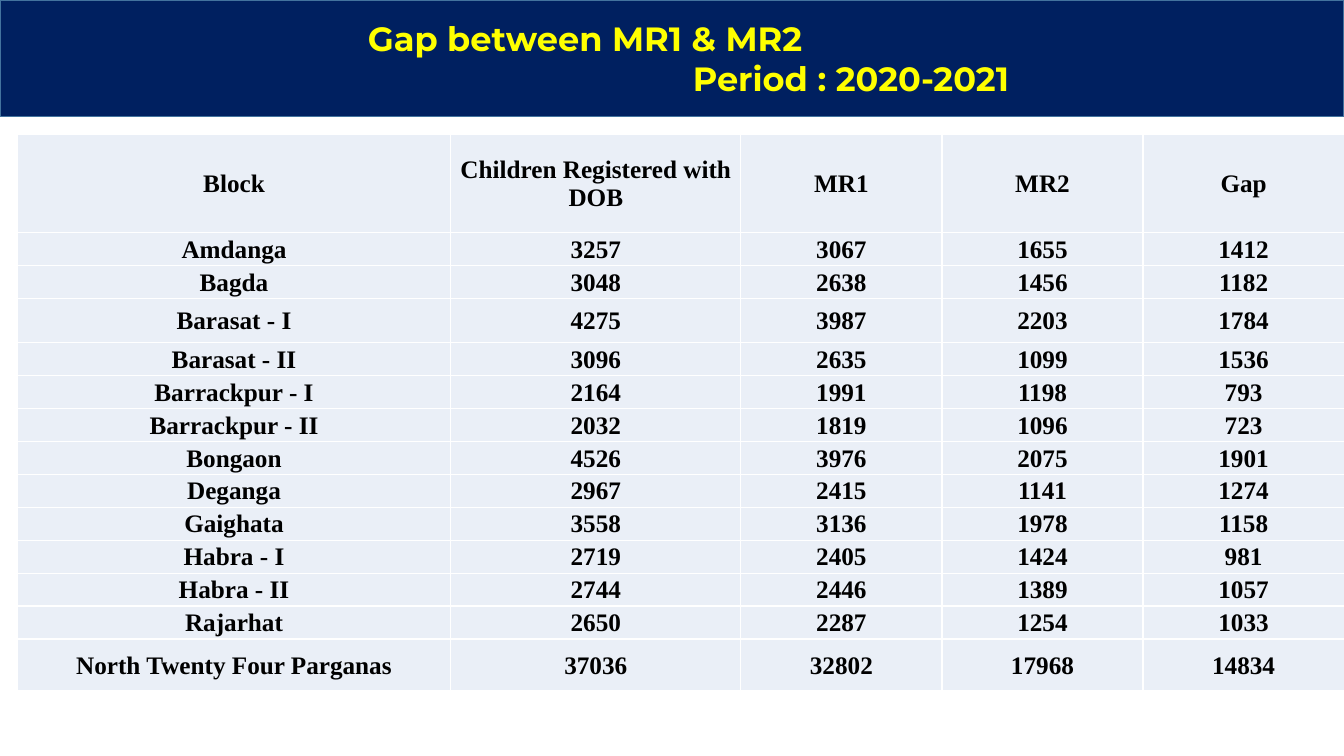
import pptx
import pptx.util
import pptx.dml.color
import pptx.enum.text
import pptx.oxml

HEADINGS = ("Block", "Children Registered with DOB", "MR1", "MR2", "Gap")
BLOCKS = [
    ("Amdanga", 3257, 3067, 1655, 1412),
    ("Bagda", 3048, 2638, 1456, 1182),
    ("Barasat - I", 4275, 3987, 2203, 1784),
    ("Barasat - II", 3096, 2635, 1099, 1536),
    ("Barrackpur - I", 2164, 1991, 1198, 793),
    ("Barrackpur - II", 2032, 1819, 1096, 723),
    ("Bongaon", 4526, 3976, 2075, 1901),
    ("Deganga", 2967, 2415, 1141, 1274),
    ("Gaighata", 3558, 3136, 1978, 1158),
    ("Habra - I", 2719, 2405, 1424, 981),
    ("Habra - II", 2744, 2446, 1389, 1057),
    ("Rajarhat", 2650, 2287, 1254, 1033),
]
DISTRICT = ("North Twenty Four Parganas", 37036, 32802, 17968, 14834)

COLUMN_SPANS = [25.8, 17.27] + [11.97] * 3
BLOCK_SPAN = 2.96
SPECIAL_SPANS = {"Block": 8.86, "Barasat - I": 4, "North Twenty Four Parganas": 4.68}


def colour(value):
    return pptx.dml.color.RGBColor.from_string(value)


def apply(target, formats):
    for attribute, value in formats.items():
        setattr(target, attribute, value)


class GapSlide:
    GRID_COLUMNS = 80
    GRID_ROWS = 68
    NAVY, EDGE, YELLOW = "002060", "43739E", "FFFF00"
    PALE, WHITE, BLACK = "EAEFF7", "FFFFFF", "000000"
    CENTER = pptx.enum.text.PP_ALIGN.CENTER
    LEFT = pptx.enum.text.PP_ALIGN.LEFT
    MIDDLE = pptx.enum.text.MSO_ANCHOR.MIDDLE
    TITLE_FONT = {"name": "Montserrat", "size": pptx.util.Pt(24), "bold": True}
    TABLE_FONT = {"name": "Times New Roman", "size": pptx.util.Pt(18), "bold": True}
    CELL = {
        "margin_left": pptx.util.Inches(0.01),
        "margin_right": pptx.util.Inches(0.01),
        "margin_top": pptx.util.Inches(0.01),
        "margin_bottom": 0,
        "vertical_anchor": MIDDLE,
    }

    def __init__(self, presentation):
        self.column = presentation.slide_width / self.GRID_COLUMNS
        self.row = presentation.slide_height / self.GRID_ROWS
        self.slide = presentation.slides.add_slide(presentation.slide_layouts[5])

    def across(self, columns):
        return round(columns * self.column)

    def down(self, rows):
        return round(rows * self.row)

    def text(self, paragraph, words, font, hue, alignment):
        paragraph.text = words
        paragraph.alignment = alignment
        apply(paragraph.font, font)
        paragraph.font.color.rgb = colour(hue)

    def title(self, subject, period, subject_indent, rows):
        banner = self.slide.shapes.title
        apply(banner, {"left": 0, "top": 0,
                       "width": self.across(self.GRID_COLUMNS),
                       "height": self.down(rows)})
        banner.fill.solid()
        banner.fill.fore_color.rgb = colour(self.NAVY)
        banner.line.color.rgb = colour(self.EDGE)
        banner.line.width = pptx.util.Pt(1)
        frame = banner.text_frame
        apply(frame, {"vertical_anchor": self.MIDDLE, "word_wrap": True,
                      "auto_size": pptx.enum.text.MSO_AUTO_SIZE.NONE})
        heading = frame.paragraphs[0]
        heading._p.get_or_add_pPr().set("marL", str(self.across(subject_indent)))
        self.text(heading, subject, self.TITLE_FONT, self.YELLOW, self.LEFT)
        self.text(frame.add_paragraph(), period, self.TITLE_FONT, self.YELLOW, self.CENTER)

    def border(self, cell):
        properties = cell._tc.get_or_add_tcPr()
        for position, side in enumerate(("lnL", "lnR", "lnT", "lnB")):
            properties.insert(position, pptx.oxml.parse_xml(
                f'<a:{side} xmlns:a="http://schemas.openxmlformats.org/drawingml/2006/main" '
                f'w="{pptx.util.Pt(1)}"><a:solidFill><a:srgbClr val="{self.WHITE}"/>'
                f'</a:solidFill></a:{side}>'))

    def cell(self, cell, words):
        apply(cell, self.CELL)
        cell.fill.solid()
        cell.fill.fore_color.rgb = colour(self.PALE)
        self.border(cell)
        self.text(cell.text_frame.paragraphs[0], words, self.TABLE_FONT, self.BLACK, self.CENTER)

    def table(self, records, left, top, column_spans, row_spans):
        table = self.slide.shapes.add_table(
            len(records), len(column_spans), self.across(left), self.down(top),
            self.across(sum(column_spans)), self.down(sum(row_spans))).table
        apply(table, {"first_row": False, "horz_banding": False})
        for column, span in zip(table.columns, column_spans):
            column.width = self.across(span)
        for row, span, record in zip(table.rows, row_spans, records):
            row.height = self.down(span)
            for cell, value in zip(row.cells, record):
                self.cell(cell, str(value))


def main():
    presentation = pptx.Presentation()
    presentation.slide_width = pptx.util.Inches(13.33)
    presentation.slide_height = pptx.util.Inches(7.5)
    records = [HEADINGS, *BLOCKS, DISTRICT]
    row_spans = [SPECIAL_SPANS.get(record[0], BLOCK_SPAN) for record in records]
    gap_slide = GapSlide(presentation)
    gap_slide.title("Gap between MR1 & MR2", "Period : 2020-2021", 21.3, 10.5)
    gap_slide.table(records, 1.03, 12.06, COLUMN_SPANS, row_spans)
    presentation.save("out.pptx")


if __name__ == "__main__":
    main()
